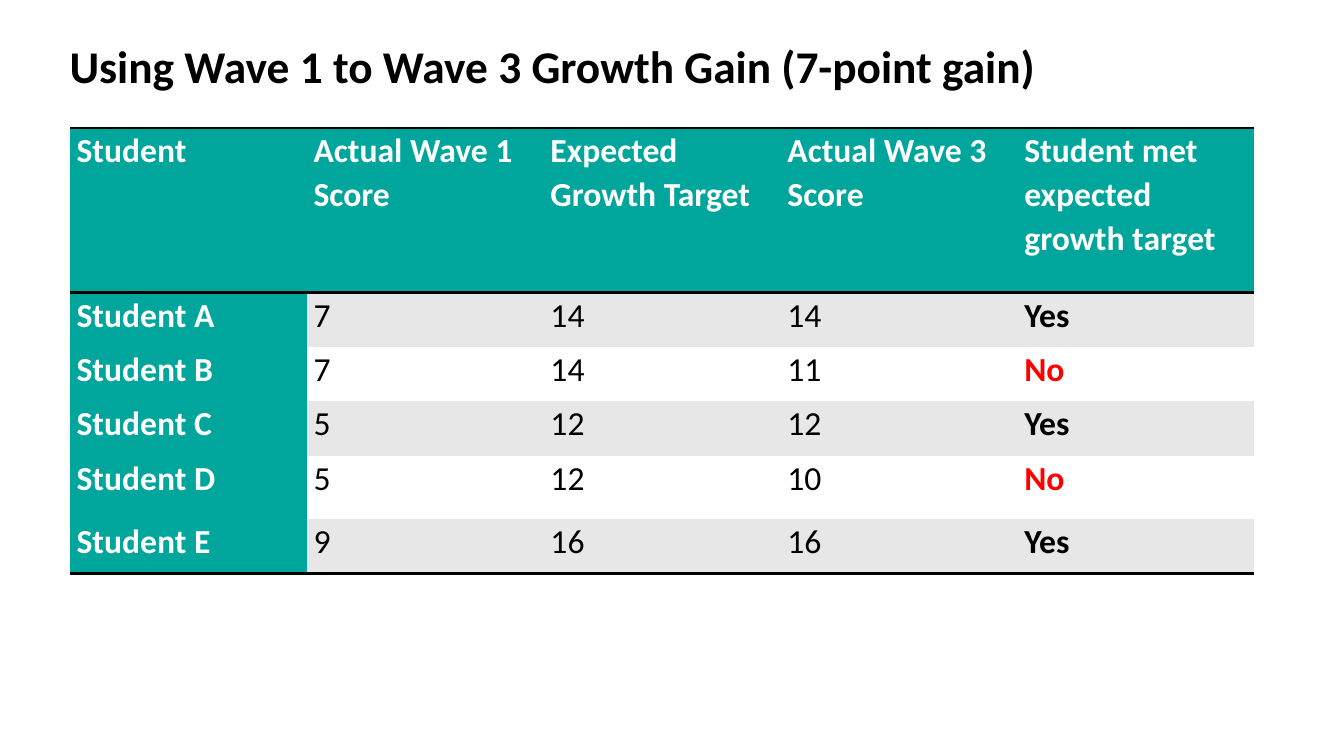
import pptx
import pptx.util
import pptx.dml.color
import pptx.enum.text
import pptx.oxml
import pptx.oxml.ns

Inches, Pt = pptx.util.Inches, pptx.util.Pt

# Content
TITLE = "Using Wave 1 to Wave 3 Growth Gain (7-point gain)"
HEADER = ("Student", "Actual Wave 1 Score", "Expected Growth Target",
          "Actual Wave 3 Score", "Student met expected growth target")
STUDENTS = [
    ("Student A", "7", "14", "14", "Yes"),
    ("Student B", "7", "14", "11", "No"),
    ("Student C", "5", "12", "12", "Yes"),
    ("Student D", "5", "12", "10", "No"),
    ("Student E", "9", "16", "16", "Yes"),
]
ROW_HEIGHTS = (1.63, 0.54, 0.54, 0.54, 0.63, 0.54)
COLUMN_WIDTH = 2.35


class Theme:
    font = "Calibri"
    title_size, table_size = 32.4, 24
    black, white, teal = "000000", "FFFFFF", "00A69B"
    band, missed = "E7E7E7", "FF0000"
    rule_width = 2


NO_STYLE_NO_GRID = "{2D5ABB26-0587-4C30-8999-92F81FD0307C}"


def rgb(value):
    return pptx.dml.color.RGBColor.from_string(value)


def add_run(p, text, size, color, bold):
    r = p.add_run()
    r.text = text
    r.font.name, r.font.size, r.font.bold = Theme.font, Pt(size), bold
    r.font.color.rgb = rgb(color)


def add_rules(cell, sides):
    """Draw horizontal rules; sides are listed in schema order, T before B."""
    for position, side in enumerate(sides):
        line = pptx.oxml.parse_xml(
            f'<a:ln{side} {pptx.oxml.ns.nsdecls("a")} w="{Pt(Theme.rule_width)}">'
            f'<a:solidFill><a:srgbClr val="{Theme.black}"/></a:solidFill></a:ln{side}>')
        cell._tc.get_or_add_tcPr().insert(position, line)


def cell_look(row, col, text):
    """Return fill, text colour and bold for a cell."""
    if row == 0 or col == 0:
        return Theme.teal, Theme.white, True
    fill = Theme.band if row % 2 else Theme.white
    color = Theme.missed if text == "No" else Theme.black
    return fill, color, col == len(HEADER) - 1


def fill_cell(cell, text, fill, color, bold):
    cell.fill.solid()
    cell.fill.fore_color.rgb = rgb(fill)
    cell.margin_left = cell.margin_right = Inches(0.07)
    cell.margin_top = cell.margin_bottom = 0
    p = cell.text_frame.paragraphs[0]
    p.line_spacing, p.space_after = 1.07, Pt(8)
    add_run(p, text, Theme.table_size, color, bold)


def main():
    prs = pptx.Presentation()
    prs.slide_width, prs.slide_height = Inches(13.33), Inches(7.5)
    s = prs.slides.add_slide(prs.slide_layouts[5])

    # Title
    title = s.shapes.title
    title.left, title.top = Inches(0.59), Inches(0.3)
    title.width, title.height = Inches(11.5), Inches(0.69)
    tf = title.text_frame
    tf.word_wrap = True
    tf.auto_size = pptx.enum.text.MSO_AUTO_SIZE.NONE
    tf.vertical_anchor = pptx.enum.text.MSO_ANCHOR.MIDDLE
    p = tf.paragraphs[0]
    p.alignment = pptx.enum.text.PP_ALIGN.LEFT
    add_run(p, TITLE, Theme.title_size, Theme.black, True)

    # Score table
    rows = [HEADER] + STUDENTS
    frame = s.shapes.add_table(
        len(rows), len(HEADER), Inches(0.69), Inches(1.27),
        Inches(COLUMN_WIDTH * len(HEADER)), Inches(sum(ROW_HEIGHTS)))
    table = frame.table
    table.horz_banding = False
    table._tbl.tblPr.find(pptx.oxml.ns.qn("a:tableStyleId")).text = NO_STYLE_NO_GRID
    for column in table.columns:
        column.width = Inches(COLUMN_WIDTH)
    rules = {0: "TB", len(rows) - 1: "B"}
    for i, values in enumerate(rows):
        table.rows[i].height = Inches(ROW_HEIGHTS[i])
        for j, text in enumerate(values):
            cell = table.cell(i, j)
            fill_cell(cell, text, *cell_look(i, j, text))
            add_rules(cell, rules.get(i, ""))

    prs.save("out.pptx")


if __name__ == "__main__":
    main()
